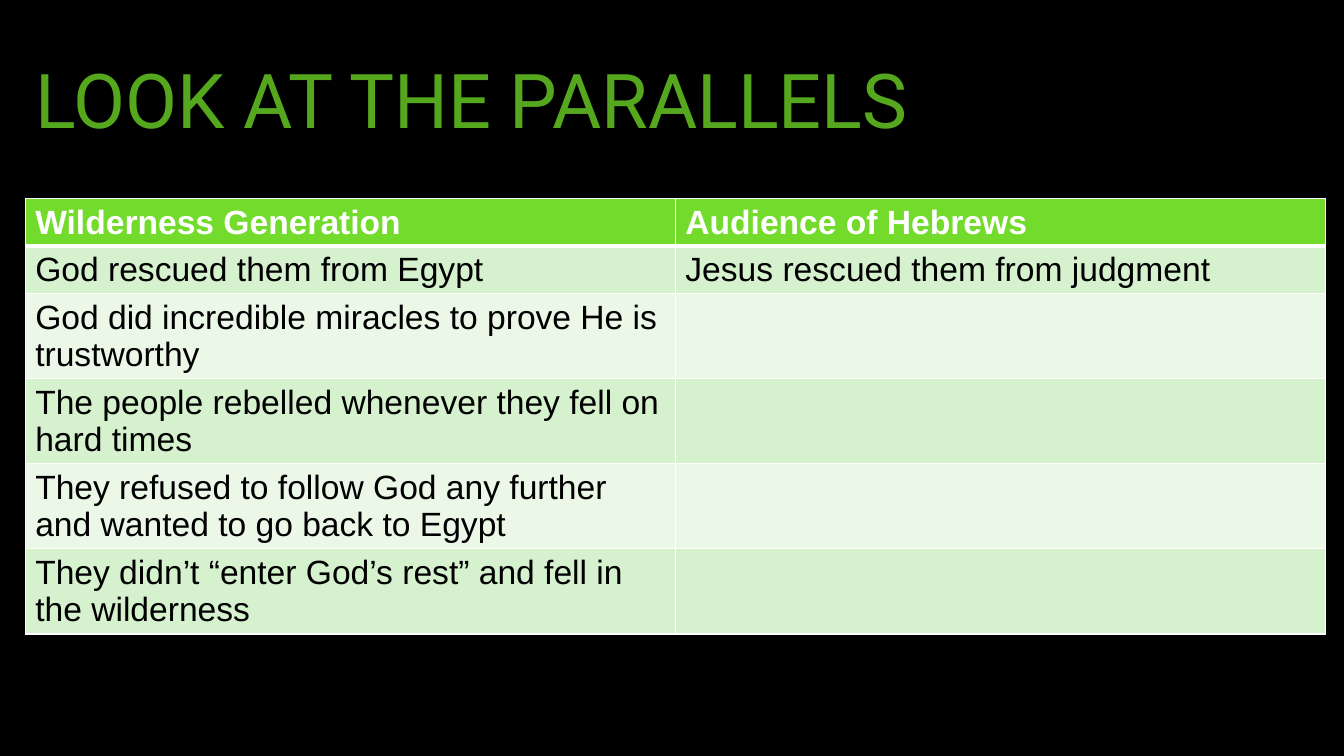
from lxml import etree
from pptx import Presentation
from pptx.dml.color import RGBColor
from pptx.enum.text import MSO_ANCHOR, MSO_AUTO_SIZE, PP_ALIGN
from pptx.oxml.ns import qn
from pptx.util import Pt

LEFT = PP_ALIGN.LEFT
MIDDLE = MSO_ANCHOR.MIDDLE
NO_FIT = MSO_AUTO_SIZE.NONE

TITLE = "LOOK AT THE PARALLELS"
PARALLELS = [
    ("Wilderness Generation", "Audience of Hebrews"),
    ("God rescued them from Egypt", "Jesus rescued them from judgment"),
    ("God did incredible miracles to prove He is trustworthy", ""),
    ("The people rebelled whenever they fell on hard times", ""),
    ("They refused to follow God any further and wanted to go back to Egypt", ""),
    ("They didn’t “enter God’s rest” and fell in the wilderness", ""),
]
COLORS = {
    "background": "000000",
    "title": "55A81D",
    "header": "72DB2B",
    "odd": "D5F1CD",
    "even": "EBF8E8",
    "header_text": "FFFFFF",
    "text": "000000",
    "border": "FFFFFF",
}
MARGIN, CONTENT_W = 18, 928.8
TITLE_TOP, TITLE_H = 15.84, 116.64
TABLE_TOP, ROW_H = 141.84, 29.2
THIN, THICK = 1, 3


def rgb(name):
    return RGBColor.from_string(COLORS[name])


def style_font(font, name, size, color, bold=False):
    font.name = name
    font.size = Pt(size)
    font.bold = bold
    font.color.rgb = rgb(color)


def set_borders(cell, top, bottom):
    tc_pr = cell._tc.get_or_add_tcPr()
    for tag, width in (("lnL", THIN), ("lnR", THIN), ("lnT", top), ("lnB", bottom)):
        ln = etree.SubElement(tc_pr, qn(f"a:{tag}"), w=str(Pt(width)))
        fill = etree.SubElement(ln, qn("a:solidFill"))
        etree.SubElement(fill, qn("a:srgbClr"), val=COLORS["border"])


def add_title(slide):
    title = slide.shapes.title
    title.left, title.top = Pt(MARGIN), Pt(TITLE_TOP)
    title.width, title.height = Pt(CONTENT_W), Pt(TITLE_H)
    tf = title.text_frame
    tf.text = TITLE
    tf.auto_size = NO_FIT
    tf.vertical_anchor = MIDDLE
    p = tf.paragraphs[0]
    p.alignment = LEFT
    p.line_spacing = 0.9
    style_font(p.runs[0].font, "Roboto", 54, "title")


def add_parallels(slide):
    rows, cols = len(PARALLELS), len(PARALLELS[0])
    table = slide.shapes.add_table(
        rows, cols, Pt(MARGIN), Pt(TABLE_TOP), Pt(CONTENT_W), Pt(rows * ROW_H)
    ).table
    for i, texts in enumerate(PARALLELS):
        header = i == 0
        band = "header" if header else "odd" if i % 2 else "even"
        for j, text in enumerate(texts):
            cell = table.cell(i, j)
            set_borders(cell, THICK if i == 1 else THIN, THICK if header else THIN)
            cell.fill.solid()
            cell.fill.fore_color.rgb = rgb(band)
            cell.text = text
            for r in cell.text_frame.paragraphs[0].runs:
                style_font(r.font, "Arial", 24, "header_text" if header else "text", header)


def main():
    prs = Presentation()
    prs.slide_width, prs.slide_height = Pt(960), Pt(540)
    slide = prs.slides.add_slide(prs.slide_layouts[5])
    slide.background.fill.solid()
    slide.background.fill.fore_color.rgb = rgb("background")
    add_title(slide)
    add_parallels(slide)
    prs.save("out.pptx")


if __name__ == "__main__":
    main()
